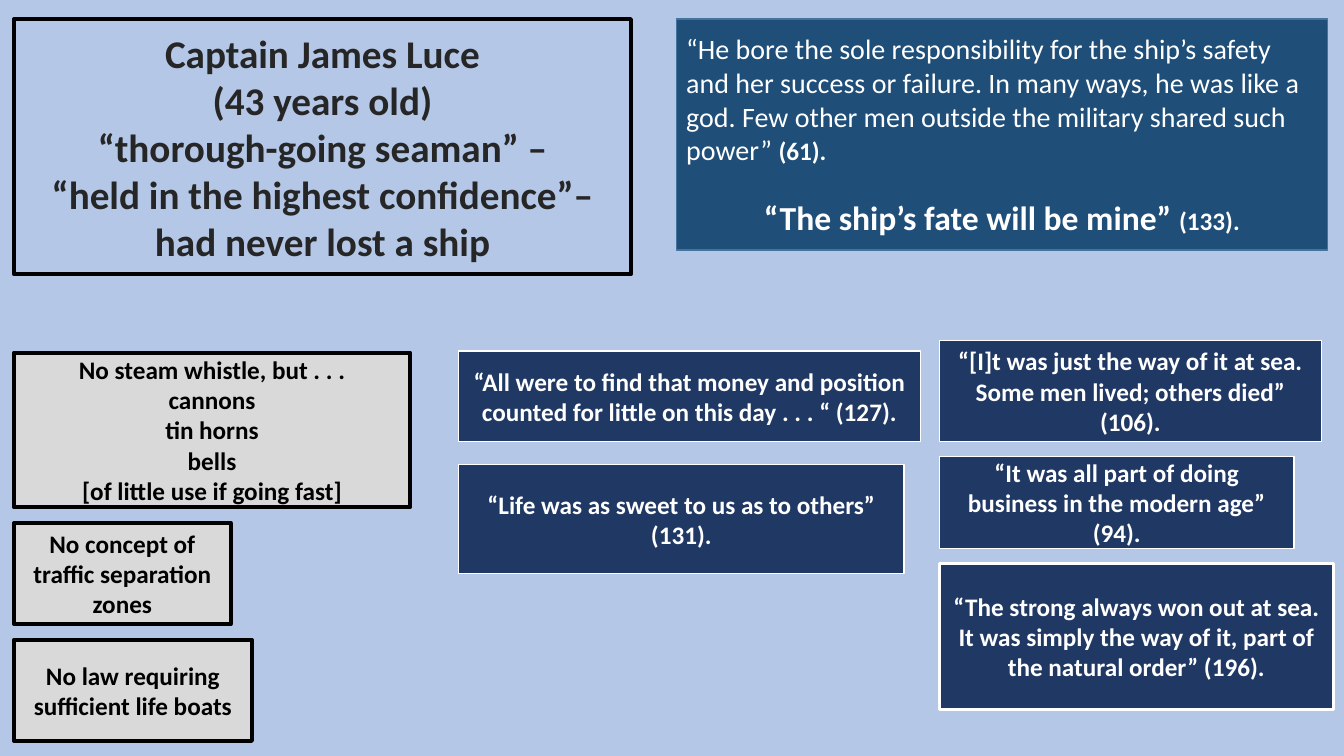
from dataclasses import dataclass

from pptx import Presentation
from pptx.dml.color import RGBColor
from pptx.enum.shapes import MSO_SHAPE
from pptx.enum.text import MSO_ANCHOR, PP_ALIGN
from pptx.util import Pt

RECT = MSO_SHAPE.RECTANGLE
MIDDLE = MSO_ANCHOR.MIDDLE
LEFT, CENTER = PP_ALIGN.LEFT, PP_ALIGN.CENTER


@dataclass(frozen=True)
class Theme:
    """Colours, font and type sizes of the slide."""
    font: str = "Calibri"
    back: str = "B4C7E7"
    ink: str = "262626"
    black: str = "000000"
    white: str = "FFFFFF"
    grey: str = "D9D9D9"
    navy: str = "203864"
    blue: str = "1F4E79"
    blue_edge: str = "43739E"
    title: int = 28
    motto: int = 24
    quote: int = 20
    body: int = 18


T = Theme()

HAZARDS = [
    (283, 110.2, 3, ["No steam whistle, but . . .", "cannons", "tin horns", "bells",
                     "[of little use if going fast]"]),
    (154.8, 72, 3, ["No concept of traffic separation zones"]),
    (169.9, 72, 3, ["No law requiring sufficient life boats"]),
]
VICTIMS = [
    (329.8, 64.8, 1, ["“All were to find that money and position counted for little "
                      "on this day . . . “ (127)."]),
    (318.2, 77.8, 1, ["“Life was as sweet to us as to others” (131)."]),
]
CUSTOMS = [
    (272.9, 72, 1, ["“[I]t was just the way of it at sea. Some men lived; others died” (106)."]),
    (253.4, 65.5, 1, ["“It was all part of doing business in the modern age” (94)."]),
    (281.5, 104.4, 2.25, ["“The strong always won out at sea. It was simply the way of it, "
                          "part of the natural order” (196)."]),
]


def rgb(color):
    """Return a colour object for a hex string."""
    return RGBColor.from_string(color)


def add_box(s, x, y, w, h, fill, edge, weight):
    """Draw a bordered rectangle and return its text frame."""
    sp = s.shapes.add_shape(RECT, Pt(x), Pt(y), Pt(w), Pt(h))
    sp.shadow.inherit = False
    if fill:
        sp.fill.solid()
        sp.fill.fore_color.rgb = rgb(fill)
    else:
        sp.fill.background()
    sp.line.color.rgb = rgb(edge)
    sp.line.width = Pt(weight)
    tf = sp.text_frame
    tf.word_wrap = True
    tf.vertical_anchor = MIDDLE
    return tf


def style(r, size, color, bold=True):
    """Apply font settings to a run."""
    r.font.name = T.font
    r.font.size = Pt(size)
    r.font.bold = bold
    r.font.color.rgb = rgb(color)


def write_lines(tf, lines, size, color):
    """Fill a text frame with centred bold paragraphs."""
    tf.text = "\n".join(lines)
    for p in tf.paragraphs:
        p.alignment = CENTER
        for r in p.runs:
            style(r, size, color)


def title_panel(s, x, y, w, h):
    """Place the outlined portrait of the captain."""
    tf = add_box(s, x, y, w, h, None, T.black, 3)
    lines = ["Captain James Luce", "(43 years old)", "“thorough-going seaman” –",
             "“held in the highest confidence”– had never lost a ship"]
    write_lines(tf, lines, T.title, T.ink)


def quote_panel(s, x, y, w, h):
    """Place the quotation on command and the captain's motto."""
    tf = add_box(s, x, y, w, h, T.blue, T.blue_edge, 1)
    duty = ("“He bore the sole responsibility for the ship’s safety and her success or "
            "failure. In many ways, he was like a god. Few other men outside the military "
            "shared such power” ")
    motto = "“The ship’s fate will be mine” "
    rows = [(duty, "(61).", T.quote, False, LEFT), (motto, "(133).", T.motto, True, CENTER)]
    for i, (text, page, size, bold, align) in enumerate(rows):
        p = tf.add_paragraph() if i else tf.paragraphs[0]
        p.text = text
        p.alignment = align
        style(p.runs[0], size, T.white, bold)
        r = p.add_run()
        r.text = page
        style(r, T.body, T.white)
    p.space_before = Pt(22)


def card_column(s, x, y, gap, cards, fill, edge, color):
    """Stack cards downwards from a corner with an equal gap."""
    for w, h, weight, lines in cards:
        tf = add_box(s, x, y, w, h, fill, edge, weight)
        write_lines(tf, lines, T.body, color)
        y += h + gap


def main():
    """Build the slide and save it."""
    prs = Presentation()
    prs.slide_width, prs.slide_height = Pt(960), Pt(540)
    s = prs.slides.add_slide(prs.slide_layouts[6])
    s.background.fill.solid()
    s.background.fill.fore_color.rgb = rgb(T.back)
    title_panel(s, 10, 13.7, 440.6, 182.2)
    quote_panel(s, 483.1, 13.7, 465.1, 164.9)
    card_column(s, 10, 252, 11.5, HAZARDS, T.grey, T.black, T.black)
    card_column(s, 327.6, 250.6, 16.5, VICTIMS, T.navy, T.white, T.white)
    card_column(s, 671, 243.4, 10.8, CUSTOMS, T.navy, T.white, T.white)
    prs.save("out.pptx")


if __name__ == "__main__":
    main()
